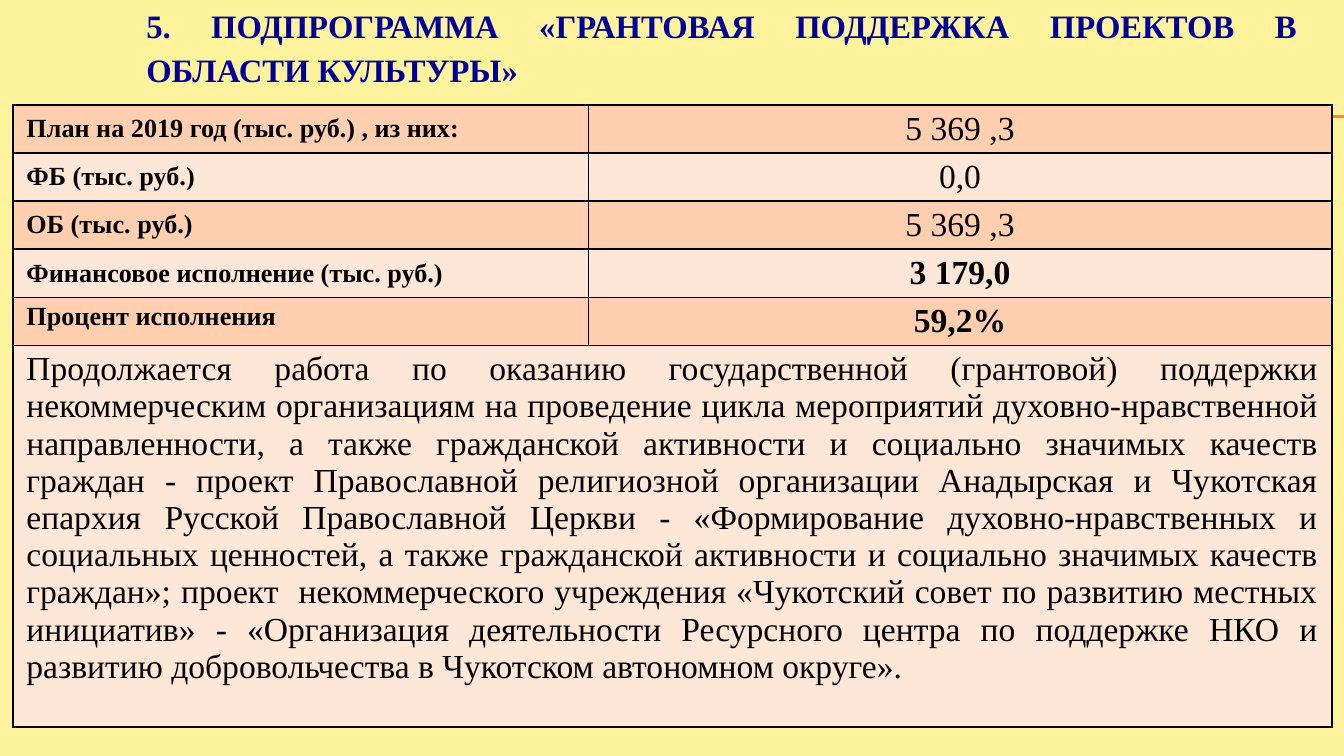
from lxml import etree
from pptx import Presentation
from pptx import util as u
from pptx.dml.color import RGBColor
from pptx.enum import shapes, text
from pptx.oxml import ns

FONT = "Times New Roman"
COLORS = {
    "background": "FFF39D",
    "rule": "FE8637",
    "title": "000099",
    "text": "000000",
    "border": "000000",
    "dark_band": "FFCFAF",
    "light_band": "FFE7D7",
}
TITLE = "5. ПОДПРОГРАММА «ГРАНТОВАЯ ПОДДЕРЖКА ПРОЕКТОВ В ОБЛАСТИ КУЛЬТУРЫ»"
FINANCES = [
    ("План на 2019 год (тыс. руб.) , из них:", "5 369 ,3", False),
    ("ФБ (тыс. руб.)", "0,0", False),
    ("ОБ (тыс. руб.)", "5 369 ,3", False),
    ("Финансовое исполнение (тыс. руб.)", "3 179,0", True),
    ("Процент исполнения", "59,2%", True),
]
SUMMARY = (
    "Продолжается работа по оказанию государственной (грантовой) поддержки "
    "некоммерческим организациям на проведение цикла мероприятий "
    "духовно-нравственной направленности, а также гражданской активности и "
    "социально значимых качеств граждан - проект Православной религиозной "
    "организации Анадырская и Чукотская епархия Русской Православной Церкви - "
    "«Формирование духовно-нравственных и социальных ценностей, а также "
    "гражданской активности и социально значимых качеств граждан»; проект  "
    "некоммерческого учреждения «Чукотский совет по развитию местных инициатив» - "
    "«Организация деятельности Ресурсного центра по поддержке НКО и развитию "
    "добровольчества в Чукотском автономном округе»."
)


def color(name):
    """Return the named palette colour."""
    return RGBColor.from_string(COLORS[name])


def write(tf, wording, size, bold, align, spacing=1.0, ink="text"):
    """Write one formatted run into the first paragraph of a text frame."""
    p = tf.paragraphs[0]
    p.alignment = align
    p.line_spacing = spacing
    r = p.add_run()
    r.text = wording
    r.font.name = FONT
    r.font.size = u.Pt(size)
    r.font.bold = bold
    r.font.color.rgb = color(ink)


def add_rules(s, left, top, width, gap):
    """Draw the double header rule."""
    for y in (top, top + gap):
        line = s.shapes.add_connector(
            shapes.MSO_CONNECTOR.STRAIGHT, u.Cm(left), u.Cm(y), u.Cm(left + width), u.Cm(y))
        line.line.color.rgb = color("rule")
        line.line.width = u.Pt(0.75)
        etree.SubElement(line._element.spPr, ns.qn("a:effectLst"))


def place_title(s, left, top, width, height):
    """Move and format the title placeholder."""
    sp = s.shapes.title
    sp.left, sp.top, sp.width, sp.height = map(u.Cm, (left, top, width, height))
    tf = sp.text_frame
    tf.word_wrap = True
    tf.auto_size = text.MSO_AUTO_SIZE.NONE
    tf.vertical_anchor = text.MSO_ANCHOR.MIDDLE
    write(tf, TITLE, 17.5, True, text.PP_ALIGN.JUSTIFY, 1.1, "title")


def style_cell(cell, band):
    """Give a cell its band colour, margins and borders."""
    cell.margin_left = cell.margin_right = u.Cm(0.25)
    cell.margin_top = cell.margin_bottom = u.Cm(0.1)
    tc_pr = cell._tc.get_or_add_tcPr()
    for side in ("a:lnL", "a:lnR", "a:lnT", "a:lnB"):
        ln = etree.SubElement(tc_pr, ns.qn(side), w=str(u.Pt(1)))
        fill = etree.SubElement(ln, ns.qn("a:solidFill"))
        etree.SubElement(fill, ns.qn("a:srgbClr"), val=COLORS["border"])
    cell.fill.solid()
    cell.fill.fore_color.rgb = color(band)


def add_finance_table(s, left, top, width, height):
    """Build the table of finances with the summary in its merged last row."""
    count = len(FINANCES)
    label_width, row_height = 10.87, 0.91
    table = s.shapes.add_table(
        count + 1, 2, u.Cm(left), u.Cm(top), u.Cm(width), u.Cm(height)).table
    table.columns[0].width = u.Cm(label_width)
    table.columns[1].width = u.Cm(width - label_width)
    for i, row in enumerate(table.rows):
        row.height = u.Cm(row_height if i < count else height - count * row_height)
        for cell in row.cells:
            style_cell(cell, "light_band" if i % 2 else "dark_band")
    for i, (label, value, bold) in enumerate(FINANCES):
        spacing = 1.15 if i < count - 1 else 1.0
        write(table.cell(i, 0).text_frame, label, 14, True, text.PP_ALIGN.LEFT, spacing)
        write(table.cell(i, 1).text_frame, value, 18, bold, text.PP_ALIGN.CENTER)
    summary = table.cell(count, 0)
    summary.merge(table.cell(count, 1))
    write(summary.text_frame, SUMMARY, 18, False, text.PP_ALIGN.JUSTIFY)


def main():
    """Build and save the presentation."""
    prs = Presentation()
    prs.slide_width, prs.slide_height = u.Cm(25.4), u.Cm(14.29)
    s = prs.slides.add_slide(prs.slide_layouts[5])
    s.background.fill.solid()
    s.background.fill.fore_color.rgb = color("background")
    add_rules(s, 1.42, 2.18, 23.98, 0.03)
    place_title(s, 2.51, 0.2, 22.28, 1.32)
    add_finance_table(s, 0.25, 1.98, 24.92, 11.76)
    prs.save("out.pptx")


if __name__ == "__main__":
    main()
